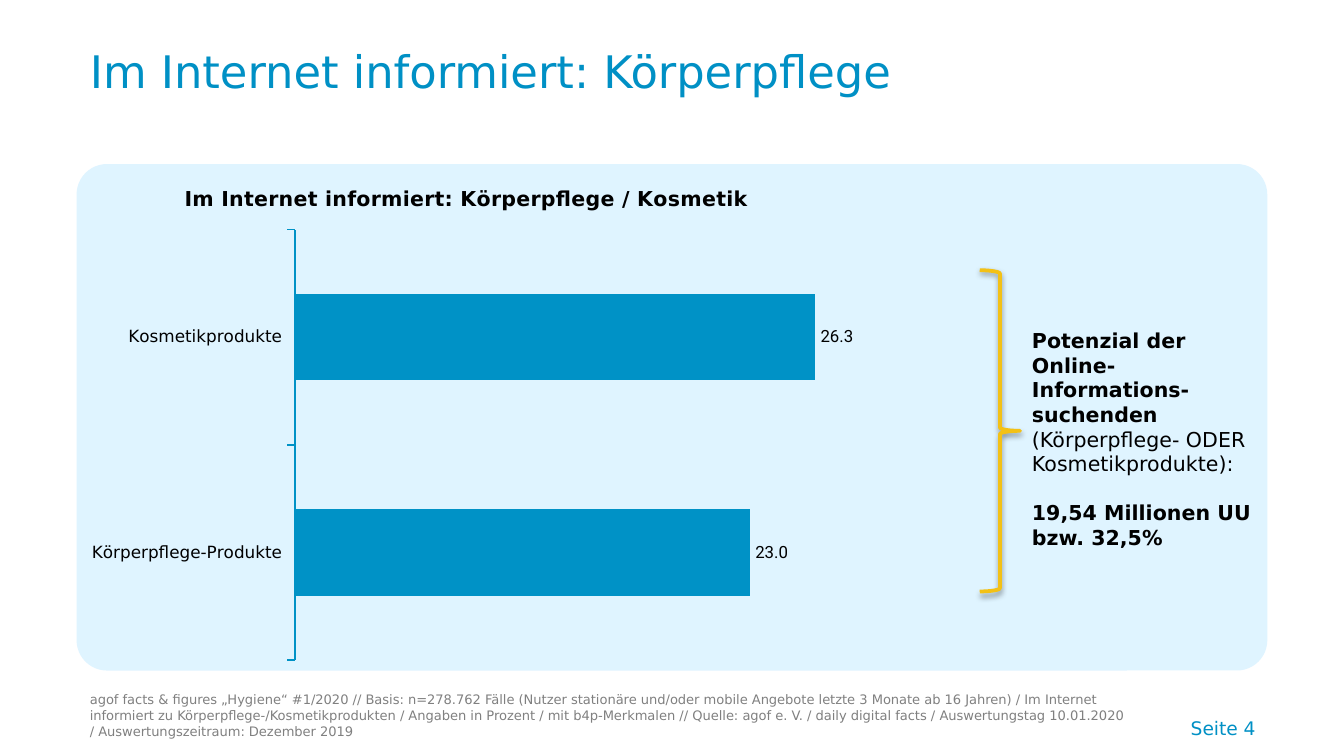
import pptx
import pptx.chart.data
import pptx.dml.color
import pptx.enum.chart
import pptx.enum.shapes
import pptx.enum.text
import pptx.oxml
import pptx.oxml.ns
import pptx.util

HUES = {
    "blue": "0090C5", "bar": "0092C6", "pale": "DFF4FF",
    "gold": "F3C116", "gray": "808080", "black": "000000",
}
FACE = "DejaVu Sans"
Align = pptx.enum.text.PP_ALIGN
Anchor = pptx.enum.text.MSO_ANCHOR
Shape = pptx.enum.shapes.MSO_SHAPE
Chart = pptx.enum.chart


class Deck:
    def __init__(self, wide, high):
        self.prs = pptx.Presentation()
        self.prs.slide_width = pptx.util.Inches(wide)
        self.prs.slide_height = pptx.util.Inches(high)
        self.slide = self.prs.slides.add_slide(self.prs.slide_layouts[6])

    def area(self, left, top, wide, high):
        w, h = self.prs.slide_width, self.prs.slide_height
        return [round(part * full / 100) for part, full in
                ((left, w), (top, h), (wide, w), (high, h))]

    def hue(self, name):
        return pptx.dml.color.RGBColor.from_string(HUES[name])

    def style(self, font, size, hue="black", bold=False, face=FACE):
        font.name = face
        font.size = pptx.util.Pt(size)
        font.bold = bold
        font.color.rgb = self.hue(hue)

    def text(self, box, paras, size, hue="black", anchor=Anchor.TOP,
             align=Align.LEFT, line=None, gap=0):
        frame = self.slide.shapes.add_textbox(*self.area(*box)).text_frame
        frame.word_wrap = True
        frame.vertical_anchor = anchor
        for i, parts in enumerate(paras):
            para = frame.add_paragraph() if i else frame.paragraphs[0]
            para.alignment = align
            para.line_spacing = line
            if i:
                para.space_before = pptx.util.Pt(gap)
            for words, bold in parts:
                run = para.add_run()
                run.text = words
                self.style(run.font, size, hue, bold)

    def panel(self, box, hue, bend):
        shape = self.slide.shapes.add_shape(
            Shape.ROUNDED_RECTANGLE, *self.area(*box))
        shape.adjustments[0] = bend
        shape.shadow.inherit = False
        shape.fill.solid()
        shape.fill.fore_color.rgb = self.hue(hue)
        shape.line.fill.background()

    def brace(self, box, hue, width):
        shape = self.slide.shapes.add_shape(
            Shape.RIGHT_BRACE, *self.area(*box))
        shape.shadow.inherit = False
        shape.fill.background()
        shape.line.color.rgb = self.hue(hue)
        shape.line.width = pptx.util.Pt(width)
        glow = shape._element.spPr.find(pptx.oxml.ns.qn("a:effectLst"))
        glow.append(pptx.oxml.parse_xml(
            f'<a:outerShdw {pptx.oxml.ns.nsdecls("a")} blurRad="40000" '
            'dist="20000" dir="5400000" rotWithShape="0">'
            f'<a:srgbClr val="{HUES["black"]}"><a:alpha val="38000"/>'
            '</a:srgbClr></a:outerShdw>'))

    def place(self, node, inner=False, **spots):
        for old in node.findall(pptx.oxml.ns.qn("c:layout")):
            node.remove(old)
        rows = '<c:layoutTarget val="inner"/>' if inner else ""
        rows += "".join(f'<c:{k}Mode val="edge"/>' for k in "xy")
        rows += "".join(f'<c:{k} val="{v / 100}"/>' for k, v in spots.items())
        layout = pptx.oxml.parse_xml(
            f'<c:layout {pptx.oxml.ns.nsdecls("c")}>'
            f'<c:manualLayout>{rows}</c:manualLayout></c:layout>')
        text = node.find(pptx.oxml.ns.qn("c:tx"))
        if text is None:
            node.insert(0, layout)
        else:
            text.addnext(layout)

    def bars(self, box, title, cats, vals, top):
        data = pptx.chart.data.CategoryChartData(number_format="0.0")
        data.categories = cats
        data.add_series("Series 1", vals)
        chart = self.slide.shapes.add_chart(
            Chart.XL_CHART_TYPE.BAR_CLUSTERED, *self.area(*box), data).chart
        chart.has_legend = False
        self.style(chart.font, 10, face="Roboto")
        chart.has_title = True
        chart.chart_title.include_in_layout = False
        para = chart.chart_title.text_frame.paragraphs[0]
        para.text = title
        self.style(para.runs[0].font, 11, bold=True)
        self.place(chart.chart_title._element, x=13.2, y=3.4)
        area = chart._chartSpace.chart.plotArea
        self.place(area, True, x=27.7, y=13, w=70.2, h=85)

        cat = chart.category_axis
        cat.reverse_order = True
        cat.has_major_gridlines = False
        cat.major_tick_mark = Chart.XL_TICK_MARK.OUTSIDE
        cat.format.line.color.rgb = self.hue("bar")
        cat.format.line.width = pptx.util.Pt(0.75)
        self.style(cat.tick_labels.font, 9)
        val = chart.value_axis
        val.minimum_scale, val.maximum_scale = 0, top
        val.major_unit = 4
        val.has_major_gridlines = False
        val.visible = False

        plot = chart.plots[0]
        plot.gap_width, plot.overlap = 150, -30
        plot.vary_by_categories = False
        fill = plot.series[0].format.fill
        fill.solid()
        fill.fore_color.rgb = self.hue("bar")
        plot.has_data_labels = True
        tags = plot.data_labels
        tags.show_value = True
        tags.number_format = "0.0"
        tags.number_format_is_linked = False
        tags.position = Chart.XL_LABEL_POSITION.OUTSIDE_END
        self.style(tags.font, 9, face="Roboto")


def main():
    deck = Deck(10, 10 * 9 / 16)
    left, top, high = 5.7, 21.7, 67
    deck.text((79.9, 91.9, 14.5, 6.75), [[("Seite 4", False)]], 10, "blue",
              Anchor.BOTTOM, Align.RIGHT)
    deck.panel((left, top, 88.6, high), "pale", 0.06)
    deck.text((left, 5, 74.2, 10),
              [[("Im Internet informiert: Körperpflege", False)]],
              24, "blue", Anchor.MIDDLE, line=0.8)
    note = (
        "agof facts & figures „Hygiene“ #1/2020 // Basis: n=278.762 Fälle "
        "(Nutzer stationäre und/oder mobile Angebote letzte 3 Monate ab "
        "16 Jahren) / Im Internet informiert zu "
        "Körperpflege-/Kosmetikprodukten / Angaben in Prozent / mit "
        "b4p-Merkmalen // Quelle: agof e. V. / daily digital facts / "
        "Auswertungstag 10.01.2020 / Auswertungszeitraum: Dezember 2019")
    deck.text((left, 91.7, 79.1, 6.9), [[(note, False)]], 7, "gray",
              Anchor.BOTTOM)
    deck.bars((left, top, 58.7, high),
              "Im Internet informiert: Körperpflege / Kosmetik",
              ["Kosmetikprodukte", "Körperpflege-Produkte"], [26.3, 23], 28)
    deck.brace((72.9, 35.75, 3, 42.5), "gold", 2)
    deck.text((75.8, 42.5, 18.5, 31.5), [
        [("Potenzial der Online-Informations-suchenden ", True),
         ("(Körperpflege- ODER Kosmetikprodukte):", False)],
        [("19,54 Millionen UU bzw. 32,5%", True)]], 11, gap=13)
    deck.prs.save("out.pptx")


if __name__ == "__main__":
    main()
